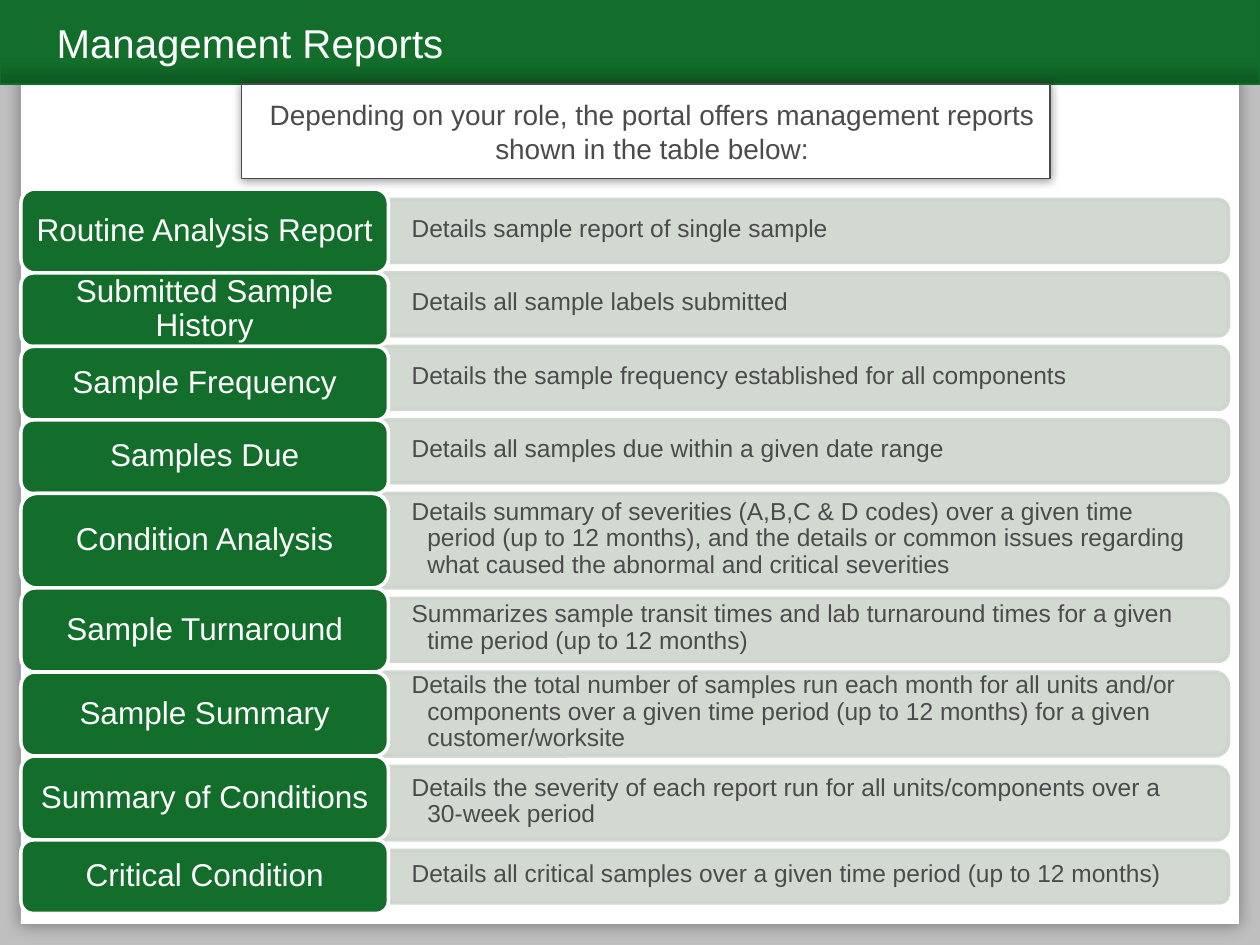
import pptx
import pptx.dml.color
import pptx.enum.shapes
import pptx.enum.text
import pptx.oxml
import pptx.oxml.ns
import pptx.util
from lxml import etree

Pt = pptx.util.Pt
SHAPE = pptx.enum.shapes.MSO_SHAPE
ALIGN = pptx.enum.text.PP_ALIGN
ANCHOR = pptx.enum.text.MSO_ANCHOR
qn = pptx.oxml.ns.qn

GREEN, PALE, GREY, WHITE = "126E2A", "CCD5CD", "4B4B4B", "FFFFFF"

# label, label height, description, bar height
REPORTS = [
    ("Routine Analysis Report", 48, "Details sample report of single sample", 36),
    ("Submitted Sample History", 42, "Details all sample labels submitted", 36),
    ("Sample Frequency", 42,
     "Details the sample frequency established for all components", 36),
    ("Samples Due", 42, "Details all samples due within a given date range", 36),
    ("Condition Analysis", 54,
     "Details summary of severities (A,B,C & D codes) over a given time period "
     "(up to 12 months), and the details or common issues regarding what caused "
     "the abnormal and critical severities", 54),
    ("Sample Turnaround", 48,
     "Summarizes sample transit times and lab turnaround times for a given time "
     "period (up to 12 months)", 36),
    ("Sample Summary", 48,
     "Details the total number of samples run each month for all units and/or "
     "components over a given time period (up to 12 months) for a given "
     "customer/worksite", 48),
    ("Summary of Conditions", 48,
     "Details the severity of each report run for all units/components over a "
     "30-week period", 42),
    ("Critical Condition", 42,
     "Details all critical samples over a given time period (up to 12 months)", 30),
]


def rgb(value):
    return pptx.dml.color.RGBColor.from_string(value)


def write(shape, text, size, color, align, anchor, insets):
    """Fill a shape with one paragraph; insets are left, top, right, bottom."""
    frame = shape.text_frame
    frame.word_wrap = True
    frame.vertical_anchor = anchor
    (frame.margin_left, frame.margin_top,
     frame.margin_right, frame.margin_bottom) = map(Pt, insets)
    paragraph = frame.paragraphs[0]
    paragraph.text = text
    paragraph.alignment = align
    paragraph.font.name = "Arial"
    paragraph.font.size = Pt(size)
    paragraph.font.color.rgb = rgb(color)
    return paragraph


presentation = pptx.Presentation()
presentation.slide_width, presentation.slide_height = Pt(720), Pt(540)
slide = presentation.slides.add_slide(presentation.slide_layouts[6])
slide.background.fill.solid()
slide.background.fill.fore_color.rgb = rgb("BFBFBF")
shapes = slide.shapes

# White page, green header and title
page = shapes.add_shape(SHAPE.RECTANGLE, Pt(12), Pt(12), Pt(696), Pt(516))
page.line.fill.background()

header = shapes.add_shape(SHAPE.RECTANGLE, 0, 0, Pt(720), Pt(48))
header.shadow.inherit = False
header.fill.gradient()
header.fill.gradient_angle = 90
for stop, (position, color) in zip(header.fill.gradient_stops,
                                   [(0, "0D5921"), (0.28, GREEN)]):
    stop.position = position
    stop.color.rgb = rgb(color)
header.line.color.rgb = rgb("0F6E28")
header.line.width = Pt(0.75)

title = shapes.add_textbox(Pt(25.2), Pt(11.5), Pt(636), Pt(30))
write(title, "Management Reports", 23, WHITE, ALIGN.LEFT, ANCHOR.BOTTOM,
      (7.2, 3.6, 7.2, 3.6))

# Description bars: turned a quarter so that the round corners face right
bar_left, bar_length, bar_gap = 216, 486, 6
bar_top = 114
for label, label_height, description, height in REPORTS:
    bar = shapes.add_shape(
        SHAPE.ROUND_2_SAME_RECTANGLE,
        Pt(bar_left + (bar_length - height) / 2),
        Pt(bar_top + (height - bar_length) / 2), Pt(height), Pt(bar_length))
    bar.rotation = 90
    bar.shadow.inherit = False
    bar.fill.solid()
    bar.fill.fore_color.rgb = rgb(PALE)
    bar.line.color.rgb = rgb(PALE)
    bar.line.width = Pt(2)
    for color in bar._element.spPr.iter(qn("a:srgbClr")):
        etree.SubElement(color, qn("a:alpha")).set("val", "90000")

    box = shapes.add_textbox(Pt(bar_left), Pt(bar_top), Pt(483), Pt(height - 2))
    paragraph = write(box, description, 14, GREY, ALIGN.LEFT, ANCHOR.MIDDLE,
                      (19.2, 0, 19.2, 0))
    paragraph.line_spacing = 0.9
    properties = paragraph._p.get_or_add_pPr()
    properties.set("marL", str(Pt(9)))
    properties.set("indent", str(-Pt(9)))
    bar_top += height + bar_gap

# Green labels, stacked without gaps
label_top = 108
for label, height, description, bar_height in REPORTS:
    shape = shapes.add_shape(SHAPE.ROUNDED_RECTANGLE, Pt(12), Pt(label_top),
                             Pt(210), Pt(height))
    shape.shadow.inherit = False
    shape.fill.solid()
    shape.fill.fore_color.rgb = rgb(GREEN)
    shape.line.color.rgb = rgb(WHITE)
    shape.line.width = Pt(2)
    paragraph = write(shape, label, 18, WHITE, ALIGN.CENTER, ANCHOR.MIDDLE,
                      (2, 0, 2, 0))
    paragraph.line_spacing = 0.9
    label_top += height

callout = shapes.add_shape(SHAPE.RECTANGLE, Pt(138), Pt(48), Pt(462), Pt(54))
callout.line.color.rgb = rgb(GREY)
callout.line.width = Pt(1)
write(callout,
      "Depending on your role, the portal offers management reports shown in the "
      "table below:", 16, GREY, ALIGN.CENTER, ANCHOR.MIDDLE, (14.4, 7.2, 7.2, 7.2))

# White panels with soft shadows: blur, distance, direction, opacity
for panel, blur, distance, angle, opacity in [(page, 8.8, 1, 90, 37),
                                              (callout, 5, 0, 0, 40)]:
    panel.fill.solid()
    panel.fill.fore_color.rgb = rgb(WHITE)
    panel.shadow.inherit = False
    effects = panel._element.spPr.find(qn("a:effectLst"))
    shadow = etree.SubElement(effects, qn("a:outerShdw"), blurRad=str(Pt(blur)),
                              dist=str(Pt(distance)), dir=str(angle * 60000),
                              rotWithShape="0")
    color = etree.SubElement(shadow, qn("a:srgbClr"), val="000000")
    etree.SubElement(color, qn("a:alpha"), val=str(opacity * 1000))

presentation.save("out.pptx")
